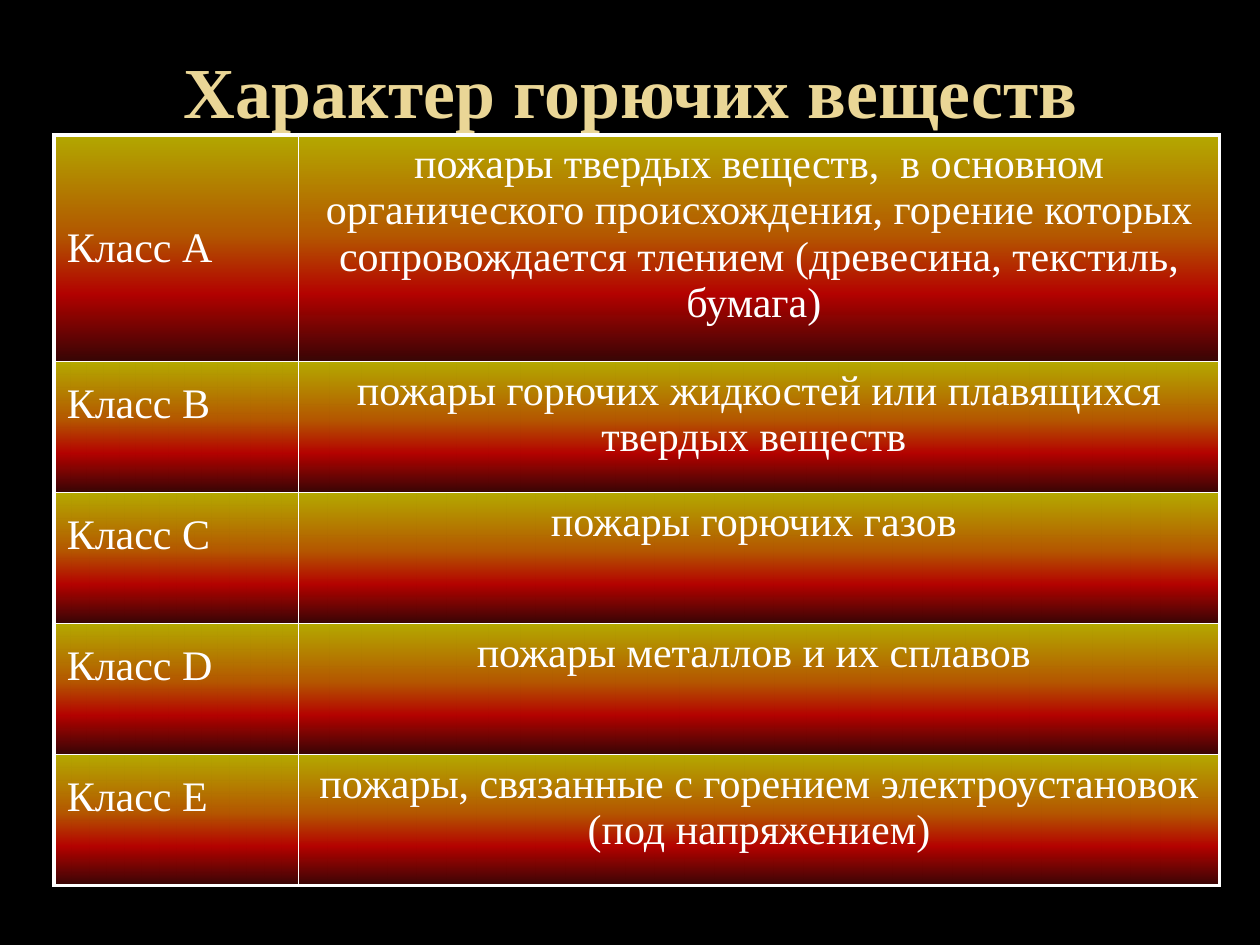
from pptx import Presentation
from pptx.dml.color import RGBColor
from pptx.enum.text import MSO_ANCHOR as Anchor, PP_ALIGN as Align
from pptx.oxml import parse_xml
from pptx.oxml.ns import nsdecls
from pptx.util import Inches, Pt

COLORS = {"background": "000000", "title": "EAD696", "text": "FFFFFF", "border": "FFFFFF"}
FIRE_STOPS = [(0, "FFF200"), (45, "FF7A00"), (70, "FF0300"), (100, "4D0808")]
FIRE_OPACITY = 70
OUTER, INNER = 2.25, 1

TITLE = "Характер горючих веществ"
FIRE_CLASSES = [
    ("Класс А", "пожары твердых веществ,  в основном органического происхождения, "
                "горение которых сопровождается тлением (древесина, текстиль, бумага) "),
    ("Класс B", "пожары горючих жидкостей или плавящихся твердых веществ "),
    ("Класс C", "пожары горючих газов "),
    ("Класс D", "пожары металлов и их сплавов "),
    ("Класс E", "пожары, связанные с горением электроустановок (под напряжением)"),
]
COLUMN_WIDTHS = [1.94, 7.31]
ROW_HEIGHTS = [1.8] + [1.04] * 4


class FireSlide:
    font_name = "Times New Roman"

    def __init__(self, deck):
        self.page = deck.slides.add_slide(deck.slide_layouts[5])
        fill = self.page.background.fill
        fill.solid()
        fill.fore_color.rgb = RGBColor.from_string(COLORS["background"])

    def add_text(self, frame, text, color, align, **font_format):
        para = frame.paragraphs[0]
        para.alignment = align
        span = para.add_run()
        span.text = text
        for name, value in {"name": self.font_name, **font_format}.items():
            setattr(span.font, name, value)
        span.font.color.rgb = RGBColor.from_string(COLORS[color])

    def title(self, text, left, top, width, height):
        box = self.page.shapes.title
        place = {"left": left, "top": top, "width": width, "height": height}
        for name, value in place.items():
            setattr(box, name, Inches(value))
        box.text_frame.vertical_anchor = Anchor.MIDDLE
        self.add_text(box.text_frame, text, "title", Align.CENTER, size=Pt(41), bold=True)

    def table(self, rows, left, top, widths, heights):
        frame = self.page.shapes.add_table(
            len(rows), len(widths), Inches(left), Inches(top),
            Inches(sum(widths)), Inches(sum(heights)))
        table = frame.table
        table.first_row = table.horz_banding = False
        for column, width in zip(table.columns, widths):
            column.width = Inches(width)
        for row, height in zip(table.rows, heights):
            row.height = Inches(height)
        last_row, last_col = len(rows) - 1, len(widths) - 1
        for r, texts in enumerate(rows):
            for c, text in enumerate(texts):
                cell = table.cell(r, c)
                is_label = c == 0
                cell.vertical_anchor = Anchor.MIDDLE if is_label else Anchor.TOP
                if is_label and r > 0:
                    cell.margin_bottom = Inches(0.42)
                self.add_text(cell.text_frame, text, "text",
                              Align.LEFT if is_label else Align.CENTER, size=Pt(24))
                self.borders(cell, {"L": c == 0, "R": c == last_col,
                                    "T": r == 0, "B": r == last_row})
                self.fire_fill(cell)

    def borders(self, cell, outer_sides):
        properties = cell._tc.get_or_add_tcPr()
        for side, is_outer in outer_sides.items():
            width = Pt(OUTER if is_outer else INNER)
            properties.append(parse_xml(
                f'<a:ln{side} {nsdecls("a")} w="{width}"><a:solidFill>'
                f'<a:srgbClr val="{COLORS["border"]}"/></a:solidFill></a:ln{side}>'))

    def fire_fill(self, cell):
        """Fill a cell with the translucent top-to-bottom flame gradient."""
        stops = "".join(
            f'<a:gs pos="{position * 1000}"><a:srgbClr val="{color}">'
            f'<a:alpha val="{FIRE_OPACITY * 1000}"/></a:srgbClr></a:gs>'
            for position, color in FIRE_STOPS)
        cell._tc.get_or_add_tcPr().append(parse_xml(
            f'<a:gradFill {nsdecls("a")} rotWithShape="1"><a:gsLst>{stops}</a:gsLst>'
            '<a:lin ang="5400000" scaled="0"/></a:gradFill>'))


def main():
    deck = Presentation()
    deck.slide_width, deck.slide_height = Inches(10), Inches(7.5)
    slide = FireSlide(deck)
    slide.title(TITLE, 0.51, 0.28, 9, 0.87)
    slide.table(FIRE_CLASSES, 0.43, 1.07, COLUMN_WIDTHS, ROW_HEIGHTS)
    deck.save("out.pptx")


if __name__ == "__main__":
    main()
